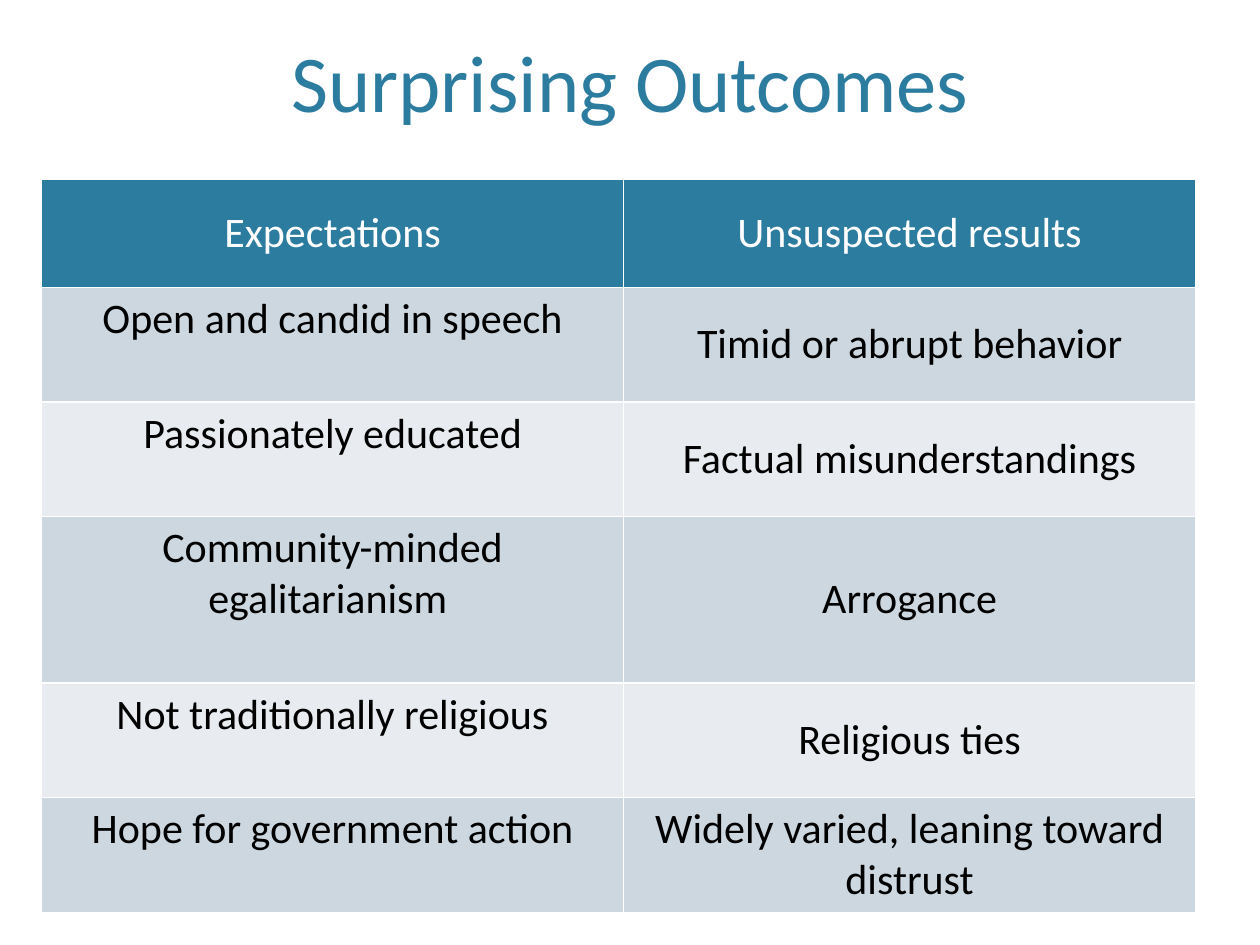
from typing import NamedTuple

from pptx import Presentation
from pptx.dml.color import RGBColor
from pptx.enum.text import MSO_ANCHOR, PP_ALIGN
from pptx.util import Inches, Pt

TOP, MIDDLE, BOTTOM = MSO_ANCHOR.TOP, MSO_ANCHOR.MIDDLE, MSO_ANCHOR.BOTTOM
CENTER = PP_ALIGN.CENTER

TEAL = RGBColor(0x2C, 0x7C, 0x9F)
WHITE = RGBColor(0xFF, 0xFF, 0xFF)
BLACK = RGBColor(0x00, 0x00, 0x00)
BANDS = (RGBColor(0xCD, 0xD7, 0xDF), RGBColor(0xE8, 0xEC, 0xF0))
FONT = "Calibri"
TITLE_ONLY = 5


class Outcome(NamedTuple):
    expectation: str
    result: str
    height: float = 0.91


HEADER = Outcome("Expectations", "Unsuspected results", 0.86)
OUTCOMES = [
    Outcome("Open and candid in speech", "Timid or abrupt behavior"),
    Outcome("Passionately educated", "Factual misunderstandings"),
    Outcome("Community-minded egalitarianism ", "Arrogance", 1.32),
    Outcome("Not traditionally religious", "Religious ties"),
    Outcome("Hope for government action", "Widely varied, leaning toward distrust"),
]
COLUMN_WIDTHS = (4.62, 4.54)


def set_text(tf, text: str, size: float, color: RGBColor) -> None:
    tf.text = text
    p = tf.paragraphs[0]
    p.alignment = CENTER
    font = p.runs[0].font
    font.name, font.size, font.bold = FONT, Pt(size), False
    font.color.rgb = color


def fill_row(table, index: int, row: Outcome) -> None:
    is_header = index == 0
    table.rows[index].height = Inches(row.height)
    for col, text in enumerate((row.expectation, row.result)):
        cell = table.cell(index, col)
        cell.fill.solid()
        cell.fill.fore_color.rgb = TEAL if is_header else BANDS[(index - 1) % 2]
        # Expectations sit at the top of their cells, results in the middle
        cell.vertical_anchor = MIDDLE if is_header or col == 1 else TOP
        set_text(cell.text_frame, text, 24, WHITE if is_header else BLACK)


def main() -> None:
    prs = Presentation()
    prs.slide_width, prs.slide_height = Inches(10), Inches(7.5)
    s = prs.slides.add_slide(prs.slide_layouts[TITLE_ONLY])

    # Title
    title = s.shapes.title
    title.left, title.top = Inches(0.6), Inches(0.12)
    title.width, title.height = Inches(8.8), Inches(0.95)
    title.text_frame.vertical_anchor = BOTTOM
    set_text(title.text_frame, "Surprising Outcomes", 46, TEAL)

    # Table of expectations and results
    rows = [HEADER, *OUTCOMES]
    table = s.shapes.add_table(
        len(rows), len(COLUMN_WIDTHS), Inches(0.33), Inches(1.42),
        Inches(sum(COLUMN_WIDTHS)), Inches(sum(row.height for row in rows)),
    ).table
    for column, width in zip(table.columns, COLUMN_WIDTHS):
        column.width = Inches(width)
    for index, row in enumerate(rows):
        fill_row(table, index, row)

    prs.save("out.pptx")


if __name__ == "__main__":
    main()
